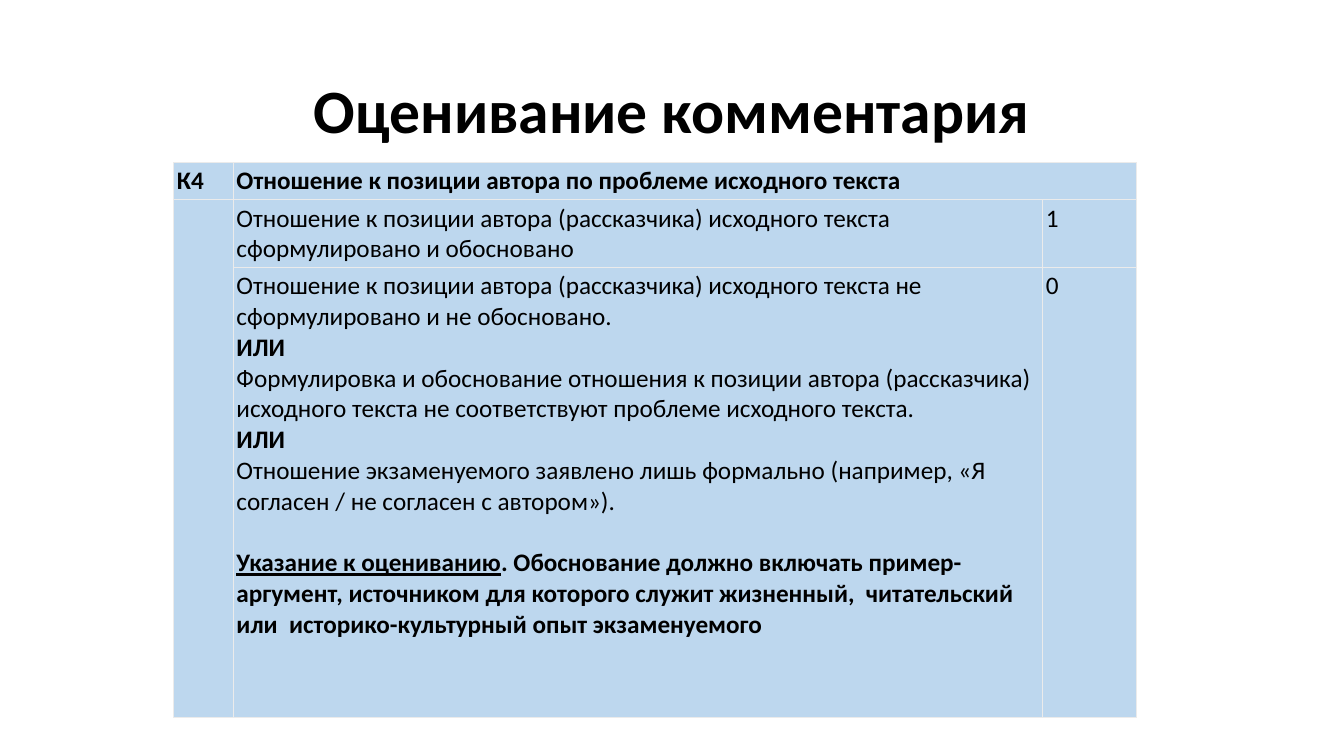
from dataclasses import dataclass

from lxml.etree import SubElement
from pptx import Presentation
from pptx.dml.color import RGBColor as RGB
from pptx.enum.text import MSO_ANCHOR as ANCHOR, PP_ALIGN as ALIGN
from pptx.oxml.ns import qn
from pptx.util import Cm, Pt

TITLE = "Оценивание комментария"
BOLD = {"bold": True}
HEADING = {"bold": True, "underline": True}

# Each cell: (row, column, paragraphs); each paragraph is a list of (text, format) runs.
CELLS = [
    (0, 0, [[("К4", BOLD)]]),
    (0, 1, [[("Отношение к позиции автора по проблеме исходного текста", BOLD)]]),
    (1, 1, [[("Отношение к позиции автора (рассказчика) исходного текста\n"
              "сформулировано и обосновано", {})]]),
    (1, 2, [[("1", {})]]),
    (2, 1, [
        [("Отношение к позиции автора (рассказчика) исходного текста "
          "не сформулировано и не обосновано.\n", {}),
         ("ИЛИ", BOLD)],
        [("Формулировка и обоснование отношения к позиции автора (рассказчика) "
          "исходного текста не соответствуют проблеме исходного текста.\n", {}),
         ("ИЛИ\n", BOLD),
         ("Отношение экзаменуемого заявлено лишь формально (например, "
          "«Я согласен / не согласен с автором»).", {})],
        [("Указание к оцениванию", HEADING),
         (". Обоснование должно включать пример-аргумент, источником для которого "
          "служит жизненный,  читательский  или  историко-культурный опыт "
          "экзаменуемого", BOLD)],
    ]),
    (2, 2, [[("0", {})]]),
]
MERGES = [((0, 1), (0, 2)), ((1, 0), (2, 0))]

SLIDE_SIZE = (33.87, 19.05)
TITLE_BOX = (2.33, 1.01, 29.21, 3.68)
TABLE_AT = (4.38, 4.1)
COLUMNS = (1.5, 20.4, 2.37)
ROWS = (0.93, 1.7, 11.34)
INSET = 0.08


@dataclass(frozen=True)
class Theme:
    font: str = "Calibri"
    text: str = "000000"
    fill: str = "BDD7EE"
    border: str = "EBEBEB"
    border_width: float = 0.75
    title_size: int = 44
    body_size: int = 18
    note_gap: int = 22


THEME = Theme()


def add_text(p, text, size=THEME.body_size, bold=False, underline=False):
    """Append text to a paragraph, turning each newline into a line break."""
    for i, line in enumerate(text.split("\n")):
        if i:
            p.add_line_break()
        if line:
            r = p.add_run()
            r.text = line
            f = r.font
            f.name, f.size, f.bold, f.underline = THEME.font, Pt(size), bold, underline
            f.color.rgb = RGB.from_string(THEME.text)


def format_cell(cell):
    cell.margin_left = cell.margin_right = Cm(INSET)
    cell.margin_top = cell.margin_bottom = Cm(INSET)
    cell.fill.solid()
    cell.fill.fore_color.rgb = RGB.from_string(THEME.fill)
    props = cell._tc.get_or_add_tcPr()
    for i, side in enumerate(("lnL", "lnR", "lnT", "lnB")):
        ln = props.makeelement(qn(f"a:{side}"), w=str(Pt(THEME.border_width)))
        props.insert(i, ln)
        SubElement(SubElement(ln, qn("a:solidFill")), qn("a:srgbClr"), val=THEME.border)


def add_title(slide):
    sp = slide.shapes.title
    sp.left, sp.top, sp.width, sp.height = map(Cm, TITLE_BOX)
    tf = sp.text_frame
    tf.vertical_anchor = ANCHOR.MIDDLE
    p = tf.paragraphs[0]
    p.alignment, p.line_spacing = ALIGN.CENTER, 0.9
    add_text(p, TITLE, size=THEME.title_size, bold=True)


def add_criteria(slide):
    table = slide.shapes.add_table(len(ROWS), len(COLUMNS), *map(Cm, TABLE_AT),
                                   Cm(sum(COLUMNS)), Cm(sum(ROWS))).table
    table.first_row = table.horz_banding = False
    for column, width in zip(table.columns, COLUMNS):
        column.width = Cm(width)
    for row, height in zip(table.rows, ROWS):
        row.height = Cm(height)
    for cell in table.iter_cells():
        format_cell(cell)
    for first, last in MERGES:
        table.cell(*first).merge(table.cell(*last))
    for row, column, paragraphs in CELLS:
        tf = table.cell(row, column).text_frame
        for i, runs in enumerate(paragraphs):
            p = tf.add_paragraph() if i else tf.paragraphs[0]
            if runs[0][1] is HEADING:
                p.space_before = Pt(THEME.note_gap)
            for text, style in runs:
                add_text(p, text, **style)


def main():
    prs = Presentation()
    prs.slide_width, prs.slide_height = map(Cm, SLIDE_SIZE)
    slide = prs.slides.add_slide(prs.slide_layouts[5])
    add_title(slide)
    add_criteria(slide)
    prs.save("out.pptx")


if __name__ == "__main__":
    main()
